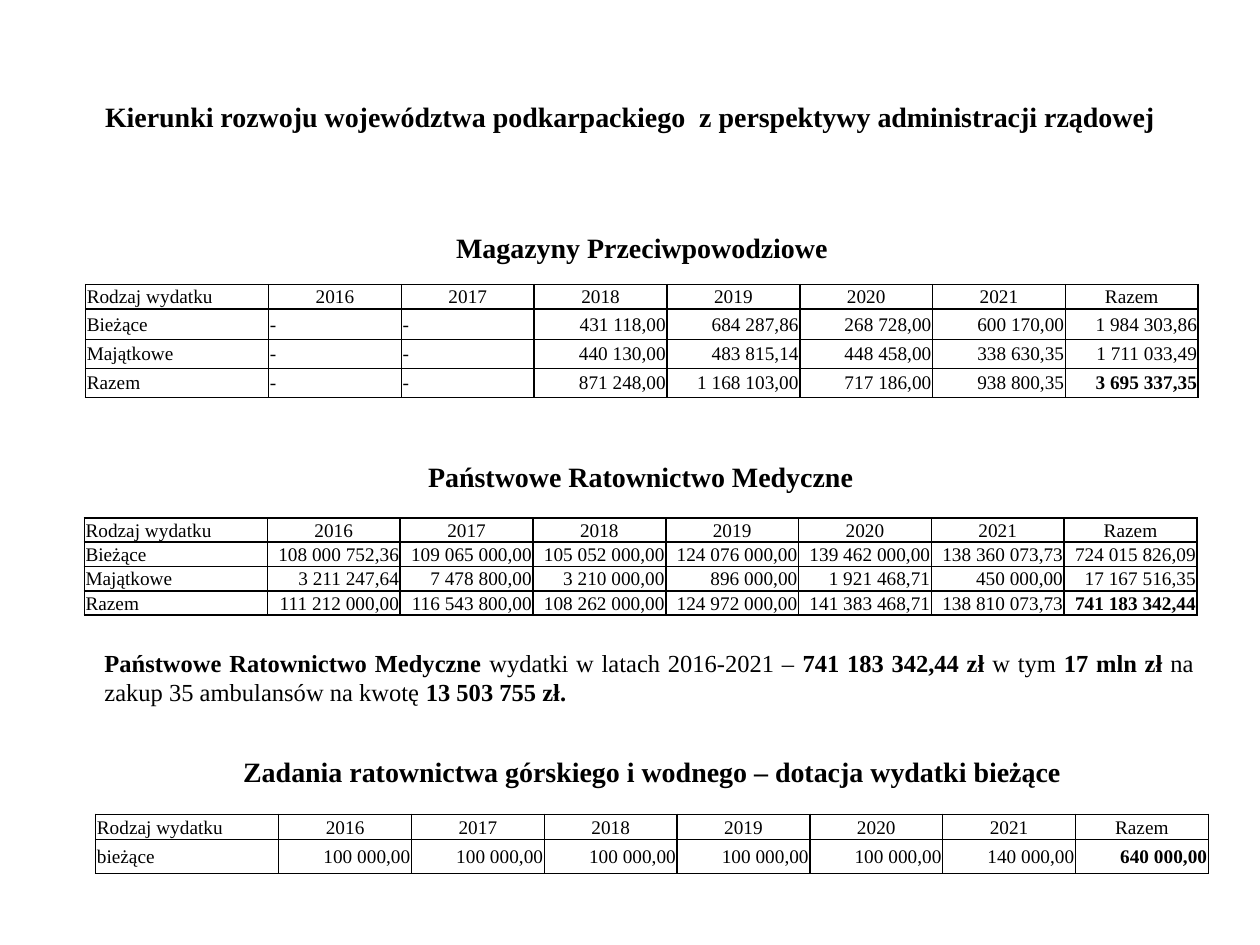
"""Build the slide on public spending in the Podkarpackie voivodeship."""
from lxml.etree import SubElement
from pptx import Presentation
from pptx.dml.color import RGBColor
from pptx.enum.text import MSO_ANCHOR, PP_ALIGN
from pptx.oxml.ns import qn
from pptx.util import Pt

FONT = "Times New Roman"
COLORS = {"text": "000000", "border": "000000"}
NO_STYLE = "{2D5ABB26-0587-4C30-8999-92F81FD0307C}"
TITLE = "Kierunki rozwoju województwa podkarpackiego  z perspektywy administracji rządowej"
HEADER = ["Rodzaj wydatku", "2016", "2017", "2018", "2019", "2020", "2021", "Razem"]
COLS = [12.2, 104.6] + [75.9] * 7
SPACER = 11.5

TABLES = [
    {
        "title": "Magazyny Przeciwpowodziowe", "anchor": MSO_ANCHOR.BOTTOM,
        "left": 36.7, "top": 105.8, "heights": [45.4, SPACER, 13, 17.3, 16.6, 16.6],
        "rows": [
            ["Bieżące", "-", "-", "431 118,00", "684 287,86", "268 728,00", "600 170,00", "1 984 303,86"],
            ["Majątkowe", "-", "-", "440 130,00", "483 815,14", "448 458,00", "338 630,35", "1 711 033,49"],
            ["Razem", "-", "-", "871 248,00", "1 168 103,00", "717 186,00", "938 800,35", "3 695 337,35"],
        ],
    },
    {
        "title": "Zadania ratownictwa górskiego i wodnego – dotacja wydatki bieżące",
        "anchor": MSO_ANCHOR.MIDDLE,
        "left": 42.5, "top": 428.5, "heights": [25.4, SPACER, 14.4, 19.4],
        "rows": [["bieżące"] + ["100 000,00"] * 5 + ["140 000,00", "640 000,00"]],
    },
    {
        "title": "Państwowe Ratownictwo Medyczne", "anchor": MSO_ANCHOR.MIDDLE,
        "left": 36, "top": 261.4, "heights": [23] + [SPACER] + [13] * 4,
        "rows": [
            ["Bieżące", "108 000 752,36", "109 065 000,00", "105 052 000,00", "124 076 000,00",
             "139 462 000,00", "138 360 073,73", "724 015 826,09"],
            ["Majątkowe", "3 211 247,64", "7 478 800,00", "3 210 000,00", "896 000,00",
             "1 921 468,71", "450 000,00", "17 167 516,35"],
            ["Razem", "111 212 000,00", "116 543 800,00", "108 262 000,00", "124 972 000,00",
             "141 383 468,71", "138 810 073,73", "741 183 342,44"],
        ],
    },
]

SUMMARY = [
    ("Państwowe Ratownictwo Medyczne ", True),
    ("wydatki w latach 2016-2021 – ", False),
    ("741 183 342,44 zł ", True),
    ("w tym ", False),
    ("17 mln zł ", True),
    ("na zakup 35 ambulansów na kwotę ", False),
    ("13 503 755 zł.", True),
]


def write(p, runs, size, align):
    """Fill a paragraph with (text, bold) runs."""
    p.alignment = align
    for text, bold in runs:
        r = p.add_run()
        r.text = text
        r.font.name, r.font.size, r.font.bold = FONT, Pt(size), bold
        r.font.color.rgb = RGBColor.from_string(COLORS["text"])


def add_text(slide, box, runs, size, align, anchor):
    """Add a wrapped text box."""
    tf = slide.shapes.add_textbox(*map(Pt, box)).text_frame
    tf.word_wrap = True
    tf.vertical_anchor = anchor
    write(tf.paragraphs[0], runs, size, align)


def set_borders(cell):
    """Draw a thin line on all four sides of a cell."""
    tc_pr = cell._tc.get_or_add_tcPr()
    for i, side in enumerate(("a:lnL", "a:lnR", "a:lnT", "a:lnB")):
        ln = tc_pr.makeelement(qn(side), {"w": str(Pt(1))})
        fill = SubElement(ln, qn("a:solidFill"))
        SubElement(fill, qn("a:srgbClr"), val=COLORS["border"])
        tc_pr.insert(i, ln)


def cell_align(text, row, col):
    """Choose the alignment of a grid cell."""
    if col == 0 or text == "-":
        return PP_ALIGN.LEFT
    return PP_ALIGN.CENTER if row == 0 else PP_ALIGN.RIGHT


def add_spending_table(slide, data):
    """Add a titled table of spending by year."""
    heights = data["heights"]
    box = (data["left"], data["top"], sum(COLS), sum(heights))
    table = slide.shapes.add_table(len(heights), len(COLS), *map(Pt, box)).table
    table.first_row = table.horz_banding = False
    table._tbl.tblPr.find(qn("a:tableStyleId")).text = NO_STYLE
    for column, width in zip(table.columns, COLS):
        column.width = Pt(width)
    for row, height in zip(table.rows, heights):
        row.height = Pt(height)
    for cell in table.iter_cells():
        cell.fill.background()
        cell.margin_left = cell.margin_right = cell.margin_top = Pt(0.7)
        cell.margin_bottom = 0
        cell.vertical_anchor = MSO_ANCHOR.MIDDLE

    title = table.cell(0, 1)
    title.merge(table.cell(0, len(COLS) - 1))
    title.vertical_anchor = data["anchor"]
    write(title.text_frame.paragraphs[0], [(data["title"], True)], 16, PP_ALIGN.CENTER)

    grid = [HEADER] + data["rows"]
    for i, values in enumerate(grid):
        for j, text in enumerate(values):
            cell = table.cell(i + 2, j + 1)
            total = i == len(grid) - 1 and j == len(values) - 1
            write(cell.text_frame.paragraphs[0], [(text, total)], 11, cell_align(text, i, j))
            set_borders(cell)
    for cell in table.iter_cells():
        if not cell.text_frame.text:
            SubElement(cell.text_frame.paragraphs[0]._p, qn("a:endParaRPr"), sz="600")


def main():
    prs = Presentation()
    prs.slide_width, prs.slide_height = Pt(720), Pt(540)
    s = prs.slides.add_slide(prs.slide_layouts[6])
    add_text(s, (36, 21.6, 648, 90), [(TITLE, True)], 16, PP_ALIGN.CENTER, MSO_ANCHOR.MIDDLE)
    for data in TABLES:
        add_spending_table(s, data)
    add_text(s, (52.6, 366.5, 636.5, 41), SUMMARY, 14, PP_ALIGN.JUSTIFY, MSO_ANCHOR.TOP)
    prs.save("out.pptx")


if __name__ == "__main__":
    main()
